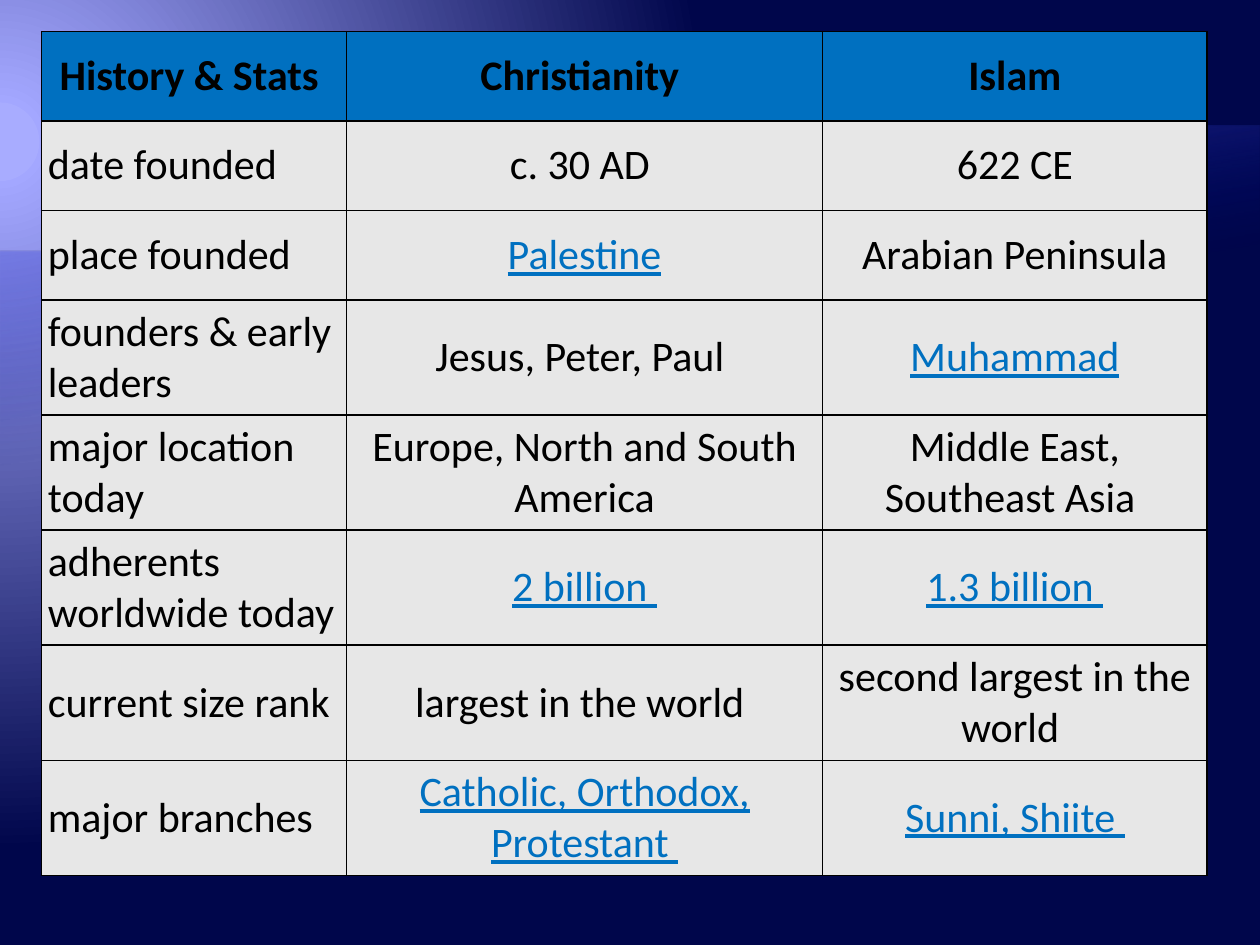
from dataclasses import dataclass

from lxml.etree import SubElement
from pptx import Presentation
from pptx.dml.color import RGBColor
from pptx.enum.text import MSO_ANCHOR, PP_ALIGN
from pptx.oxml import parse_xml
from pptx.oxml.ns import nsdecls, qn
from pptx.util import Inches, Pt


@dataclass(frozen=True)
class Theme:
    """Colours, font and sizes of the slide."""
    font: str = "Calibri"
    size: int = 24
    border: float = 1
    ink: str = "000000"
    accent: str = "0070C0"
    body: str = "E7E7E7"
    glow: tuple = ((5, "A8ACFF", 100), (5, "A3A7FF", 100), (90, "00064B", 100))
    deep_wave: tuple = ((65, "000D9E", 0), (100, "797FFF", 55))
    pale_wave: tuple = ((65, "000D9E", 0), (100, "A3A7FF", 30))


THEME = Theme()
COLUMNS = (2.42, 3.78, 3.05)
ROW_HEIGHT = 0.71
ROWS = (
    ("History & Stats ", "Christianity ", "Islam"),
    ("date founded", "c. 30 AD ", "622 CE"),
    ("place founded", "Palestine", "Arabian Peninsula"),
    ("founders & early leaders", "Jesus, Peter, Paul ", "Muhammad"),
    ("major location today", "Europe, North and South America",
     "Middle East, Southeast Asia "),
    ("adherents worldwide today", "2 billion ", "1.3 billion "),
    ("current size rank", "largest in the world ",
     "second largest in the world "),
    ("major branches", "Catholic, Orthodox, Protestant ", "Sunni, Shiite "),
)
UNDERLINED = {(2, 1), (3, 2), (5, 1), (5, 2), (7, 1), (7, 2)}
GLOW_SHADE = ('<a:path path="circle"><a:fillToRect l="20000" t="30000" '
              'r="135000" b="100000"/></a:path>')
WAVE_SHADE = '<a:lin ang="15600000" scaled="0"/>'


def set_gradient(fill, root, stops, shade):
    """Give the first fill under root a gradient of (place, colour, opacity)."""
    fill.solid()
    solid = next(root.iter(qn("a:solidFill")))
    gs = "".join(
        f'<a:gs pos="{pos * 1000}"><a:srgbClr val="{color}">'
        f'<a:alpha val="{alpha * 1000}"/></a:srgbClr></a:gs>'
        for pos, color, alpha in stops)
    solid.getparent().replace(solid, parse_xml(
        f'<a:gradFill {nsdecls("a")} rotWithShape="1">'
        f'<a:gsLst>{gs}</a:gsLst>{shade}</a:gradFill>'))


def curve(points, steps=60):
    """Return points along a cubic Bezier curve."""
    weights = [((1 - t) ** 3, 3 * t * (1 - t) ** 2, 3 * t * t * (1 - t), t ** 3)
               for t in (i / steps for i in range(steps + 1))]
    return [tuple(sum(w * p[axis] for w, p in zip(ws, points))
                  for axis in (0, 1)) for ws in weights]


def add_wave(s, bottom, crest, stops):
    """Add a full-width band with a curved top edge."""
    edge = curve([(0, 2.13), *crest])
    builder = s.shapes.build_freeform(10, bottom, scale=Inches(1))
    builder.add_line_segments([(0, bottom), *edge], close=True)
    shape = builder.convert_to_shape()
    shape.shadow.inherit = False
    shape.line.fill.background()
    set_gradient(shape.fill, shape._element, stops, WAVE_SHADE)


def add_borders(cell):
    """Draw a thin line on each side of a cell."""
    tc_pr = cell._tc.get_or_add_tcPr()
    for i, side in enumerate(("lnL", "lnR", "lnT", "lnB")):
        ln = SubElement(tc_pr, qn(f"a:{side}"), w=str(Pt(THEME.border)))
        tc_pr.insert(i, ln)
        fill = SubElement(ln, qn("a:solidFill"))
        SubElement(fill, qn("a:srgbClr"), val=THEME.ink)


def fill_cell(cell, text, header, label, underlined):
    """Write and format one table cell."""
    sides = ("left", "right", "top", "bottom")
    layout = {f"margin_{side}": Inches(0.05) for side in sides}
    layout["vertical_anchor"] = MSO_ANCHOR.MIDDLE
    for name, value in layout.items():
        setattr(cell, name, value)
    cell.fill.solid()
    cell.fill.fore_color.rgb = RGBColor.from_string(
        THEME.accent if header else THEME.body)
    add_borders(cell)
    p = cell.text_frame.paragraphs[0]
    p.alignment = PP_ALIGN.LEFT if label else PP_ALIGN.CENTER
    r = p.add_run()
    r.text = text
    style = {"name": THEME.font, "size": Pt(THEME.size), "bold": header,
             "underline": underlined}
    for name, value in style.items():
        setattr(r.font, name, value)
    r.font.color.rgb = RGBColor.from_string(
        THEME.accent if underlined else THEME.ink)


def add_comparison(s):
    """Add the table that compares the two religions."""
    table = s.shapes.add_table(
        len(ROWS), len(COLUMNS), Inches(0.33), Inches(0.25),
        Inches(sum(COLUMNS)), Inches(ROW_HEIGHT * len(ROWS))).table
    for column, width in zip(table.columns, COLUMNS):
        column.width = Inches(width)
    for i, row in enumerate(ROWS):
        table.rows[i].height = Inches(ROW_HEIGHT)
        for j, text in enumerate(row):
            fill_cell(table.cell(i, j), text, header=i == 0,
                      label=i > 0 and j == 0, underlined=(i, j) in UNDERLINED)


def main():
    """Build and save the slide."""
    prs = Presentation()
    prs.slide_width, prs.slide_height = Inches(10), Inches(7.5)
    s = prs.slides.add_slide(prs.slide_layouts[6])
    set_gradient(s.background.fill, s._element, THEME.glow, GLOW_SHADE)
    add_wave(s, 7.33, [(5, 2.13), (5.34, 0.05), (10, 1.25)], THEME.deep_wave)
    add_wave(s, 6.37, [(5, 2.13), (5.98, 0.31), (10, 1.47)], THEME.pale_wave)
    add_comparison(s)
    prs.save("out.pptx")


if __name__ == "__main__":
    main()
